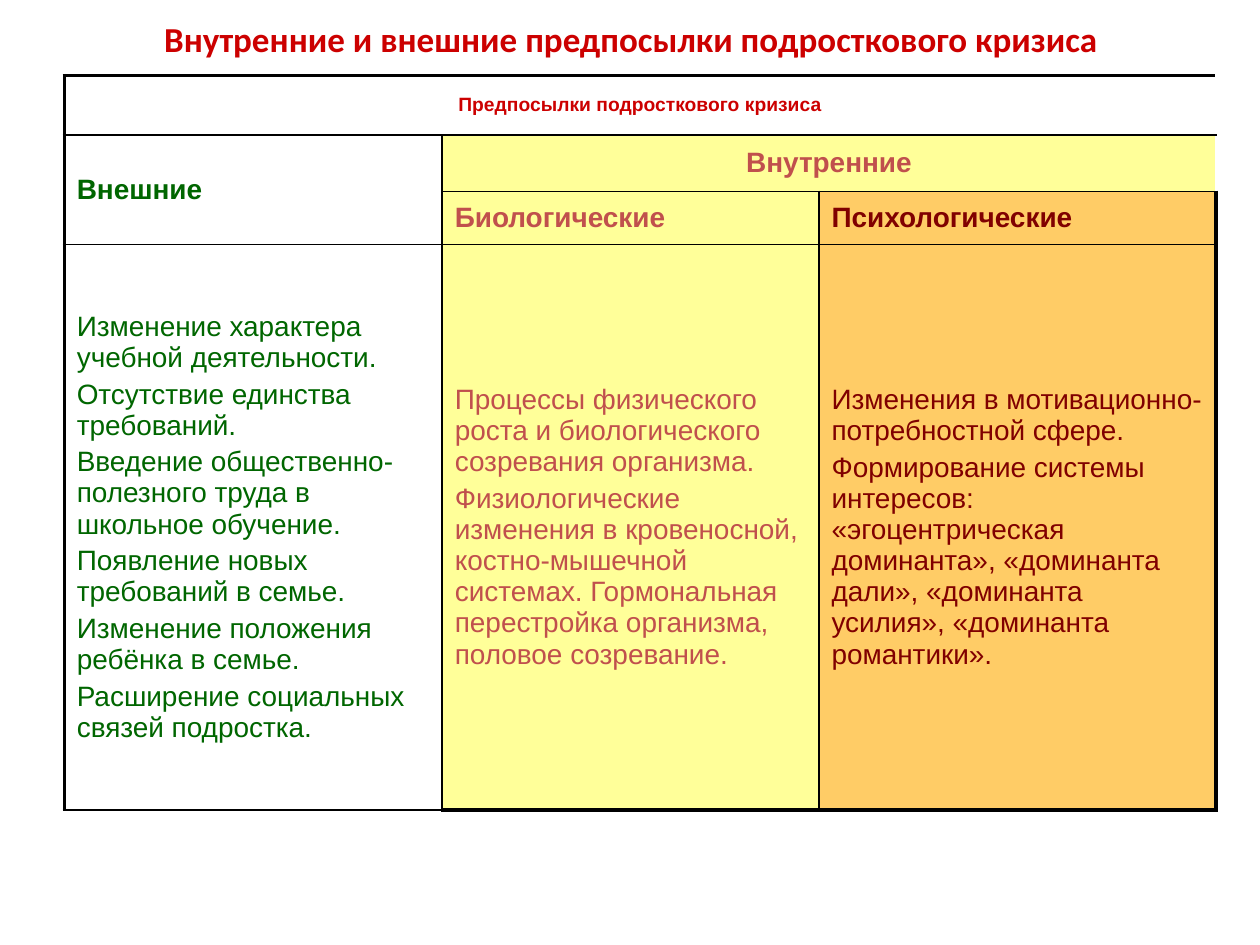
from lxml import etree
from pptx import Presentation
from pptx.dml.color import RGBColor
from pptx.enum.text import MSO_ANCHOR, PP_ALIGN
from pptx.oxml.ns import qn
from pptx.util import Inches, Pt

MIDDLE = MSO_ANCHOR.MIDDLE
LEFT, CENTER = PP_ALIGN.LEFT, PP_ALIGN.CENTER
RED = RGBColor(0xCC, 0x00, 0x00)
GREEN = RGBColor(0x00, 0x66, 0x00)
ROSE = RGBColor(0xC0, 0x50, 0x4D)
MAROON = RGBColor(0x80, 0x00, 0x00)
WHITE = RGBColor(0xFF, 0xFF, 0xFF)
YELLOW = RGBColor(0xFF, 0xFF, 0x99)
ORANGE = RGBColor(0xFF, 0xCC, 0x66)
THIN, THICK = 1, 2.25

WIDTHS = [3, 2.99, 3.15]
HEIGHTS = [0.47, 0.45, 0.42, 4.49]

# first row, first column, last row, last column, fill, colour, size, bold, alignment, lines
BLOCKS = [
    (0, 0, 0, 2, WHITE, RED, 11, True, CENTER, ["Предпосылки подросткового кризиса"]),
    (1, 0, 2, 0, WHITE, GREEN, 16, True, LEFT, ["Внешние"]),
    (1, 1, 1, 2, YELLOW, ROSE, 16, True, CENTER, ["Внутренние"]),
    (2, 1, 2, 1, YELLOW, ROSE, 16, True, LEFT, ["Биологические"]),
    (2, 2, 2, 2, ORANGE, MAROON, 16, True, LEFT, ["Психологические"]),
    (3, 0, 3, 0, WHITE, GREEN, 16, False, LEFT, [
        "Изменение характера учебной деятельности.",
        "Отсутствие единства требований.",
        "Введение общественно-полезного труда в школьное обучение.",
        "Появление новых требований в семье.",
        "Изменение положения ребёнка в семье.",
        "Расширение социальных связей подростка.",
    ]),
    (3, 1, 3, 1, YELLOW, ROSE, 16, False, LEFT, [
        "Процессы физического роста и биологического созревания организма.",
        "Физиологические изменения в кровеносной, костно-мышечной системах. "
        "Гормональная перестройка организма, половое созревание.",
    ]),
    (3, 2, 3, 2, ORANGE, MAROON, 16, False, LEFT, [
        "Изменения в мотивационно-потребностной сфере.",
        "Формирование системы интересов: «эгоцентрическая доминанта», "
        "«доминанта дали», «доминанта усилия», «доминанта романтики».",
    ]),
]


def style(para, font, size, color, bold, align):
    para.alignment = align
    for run in para.runs:
        run.font.name = font
        run.font.size = Pt(size)
        run.font.bold = bold
        run.font.color.rgb = color


def border(cell, side, width):
    """Draw one black edge; call in the order L, R, T, B and before the fill."""
    line = etree.SubElement(cell._tc.get_or_add_tcPr(), qn(f"a:ln{side}"), w=str(Pt(width)))
    fill = etree.SubElement(line, qn("a:solidFill"))
    etree.SubElement(fill, qn("a:srgbClr"), val="000000")


prs = Presentation()
prs.slide_width, prs.slide_height = Inches(10), Inches(7.5)
slide = prs.slides.add_slide(prs.slide_layouts[5])

title = slide.shapes.title
title.left, title.top = Inches(0.51), Inches(0)
title.width, title.height = Inches(9), Inches(0.61)
title.text_frame.text = "Внутренние и внешние предпосылки подросткового кризиса"
title.text_frame.vertical_anchor = MIDDLE
style(title.text_frame.paragraphs[0], "Calibri", 20, RED, True, CENTER)

table = slide.shapes.add_table(
    len(HEIGHTS), len(WIDTHS), Inches(0.51), Inches(0.6),
    Inches(sum(WIDTHS)), Inches(sum(HEIGHTS))).table
table.first_row = table.horz_banding = False
for column, width in zip(table.columns, WIDTHS):
    column.width = Inches(width)
for row, height in zip(table.rows, HEIGHTS):
    row.height = Inches(height)

for top, left, bottom, right, fill, color, size, bold, align, lines in BLOCKS:
    head = table.cell(top, left)
    if (top, left) != (bottom, right):
        head.merge(table.cell(bottom, right))

    # Only the outer edges of a merged block get a line
    for r in range(top, bottom + 1):
        for c in range(left, right + 1):
            cell = table.cell(r, c)
            if c == left:
                border(cell, "L", THICK if c == 0 else THIN)
            if c == right:
                border(cell, "R", THICK if c == 2 else THIN)
            if r == top:
                border(cell, "T", THICK if r == 0 else THIN)
            if r == bottom:
                border(cell, "B", THICK if r == 3 and c > 0 else THIN)
            cell.fill.solid()
            cell.fill.fore_color.rgb = fill

    head.vertical_anchor = MIDDLE
    head.text_frame.text = "\n".join(lines)
    for para in head.text_frame.paragraphs:
        style(para, "Arial", size, color, bold, align)
        para.space_before = Pt(size * 0.2)

prs.save("out.pptx")
